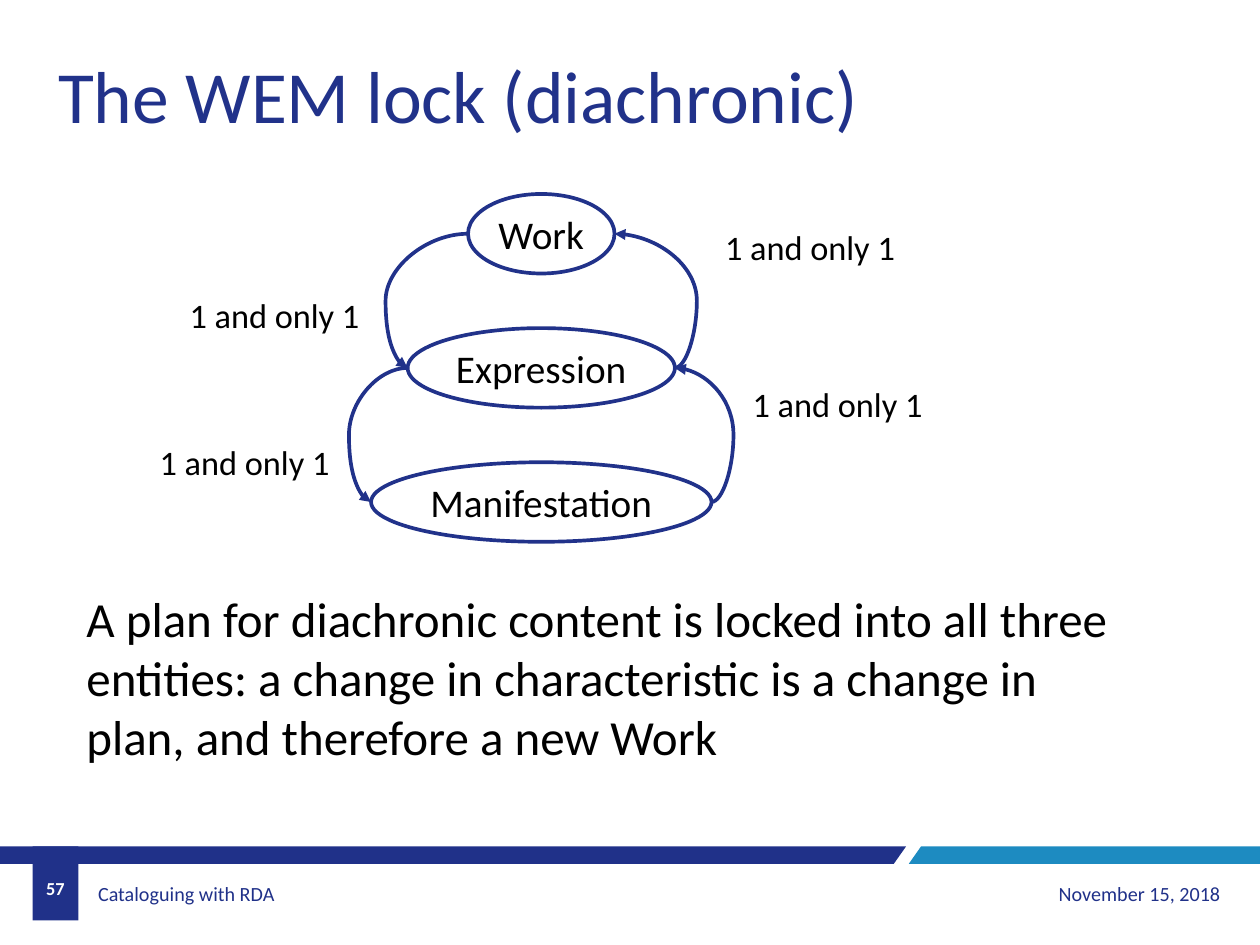
from dataclasses import dataclass
from lxml import etree
from pptx import Presentation
from pptx.dml.color import RGBColor
from pptx.enum.shapes import MSO_CONNECTOR, MSO_SHAPE
from pptx.enum.text import MSO_ANCHOR, PP_ALIGN
from pptx.oxml.ns import qn
from pptx.util import Inches, Pt

CURVE = MSO_CONNECTOR.CURVE
OVAL, RECT = MSO_SHAPE.OVAL, MSO_SHAPE.RECTANGLE
TOP, MIDDLE = MSO_ANCHOR.TOP, MSO_ANCHOR.MIDDLE
LEFT, CENTER, RIGHT = PP_ALIGN.LEFT, PP_ALIGN.CENTER, PP_ALIGN.RIGHT
OVAL_LEFT, OVAL_RIGHT = 2, 6
COLS, ROWS = 48, 36


@dataclass(frozen=True)
class Theme:
    font: str = "Calibri"
    band: str = "203189"
    accent: str = "1D8BC1"
    ink: str = "21328A"
    text: str = "000000"
    paper: str = "FFFFFF"
    title: float = 60
    body: float = 40
    entity: float = 32
    label: float = 28
    footer: float = 16.4
    number: float = 14.9
    stroke: float = 3


class Deck:
    def __init__(self, theme):
        self.theme = theme
        self.prs = Presentation()
        self.prs.slide_width, self.prs.slide_height = Inches(14.28), Inches(10.71)
        self.slide = self.prs.slides.add_slide(self.prs.slide_layouts[6])
        self.shapes = self.slide.shapes

    def x(self, cols):
        return round(self.prs.slide_width * cols / COLS)

    def y(self, rows):
        return round(self.prs.slide_height * rows / ROWS)

    def box(self, left, top, width, height):
        return self.x(left), self.y(top), self.x(width), self.y(height)

    def paint(self, sp, fill, line=None):
        sp.shadow.inherit = False
        sp.fill.solid()
        sp.fill.fore_color.rgb = RGBColor.from_string(fill)
        if line:
            sp.line.color.rgb = RGBColor.from_string(line)
            sp.line.width = Pt(self.theme.stroke)
        else:
            sp.line.fill.background()
        return sp

    def fill_text(self, sp, text, size, color, align=LEFT, bold=False, **frame):
        tf = sp.text_frame
        for name, value in {"word_wrap": False, "vertical_anchor": TOP, **frame}.items():
            setattr(tf, name, value)
        p = tf.paragraphs[0]
        p.alignment = align
        r = p.add_run()
        r.text = text
        style = {"name": self.theme.font, "size": Pt(size), "bold": bold}
        for name, value in style.items():
            setattr(r.font, name, value)
        r.font.color.rgb = RGBColor.from_string(color)

    def text(self, place, text, size, color, **style):
        self.fill_text(self.shapes.add_textbox(*self.box(*place)), text, size, color, **style)

    def rect(self, place, fill):
        self.paint(self.shapes.add_shape(RECT, *self.box(*place)), fill)

    def polygon(self, points, fill):
        first, *rest = [(self.x(col), self.y(row)) for col, row in points]
        builder = self.shapes.build_freeform(*first)
        builder.add_line_segments(rest, close=True)
        self.paint(builder.convert_to_shape(), fill)

    def oval(self, place, text):
        t = self.theme
        sp = self.paint(self.shapes.add_shape(OVAL, *self.box(*place)), t.paper, t.ink)
        self.fill_text(sp, text, t.entity, t.text, align=CENTER)
        return sp

    def arc(self, start, end, site, bulge):
        ends = []
        for sp in (start, end):
            side = sp.left if site == OVAL_LEFT else sp.left + sp.width
            ends += [side, sp.top + sp.height // 2]
        s = self.shapes.add_connector(CURVE, *ends)
        s.line.color.rgb = RGBColor.from_string(self.theme.ink)
        s.line.width = Pt(self.theme.stroke)
        props = s._element.spPr
        etree.SubElement(props.find(qn("a:ln")), qn("a:tailEnd"), type="triangle")
        etree.SubElement(props, qn("a:effectLst"))
        reach = self.x(bulge) / s.width
        bend = 1 + reach if site == OVAL_LEFT else -reach
        guides = props.find(qn("a:prstGeom")).get_or_add_avLst()
        etree.SubElement(guides, qn("a:gd"), name="adj1", fmla=f"val {round(bend * 100000)}")
        links = s._element.nvCxnSpPr.cNvCxnSpPr
        for tag, sp in (("a:stCxn", start), ("a:endCxn", end)):
            etree.SubElement(links, qn(tag), id=str(sp.shape_id), idx=str(site))


def draw_footer(deck):
    t = deck.theme
    top, bottom = 32.24, 32.91
    deck.polygon([(34.52, top), (0, top), (0, bottom), (34.05, bottom)], t.band)
    deck.polygon([(COLS, top), (35.09, top), (34.62, bottom), (COLS, bottom)], t.accent)
    deck.rect((1.24, top, 1.75, 2.82), t.band)
    deck.text((3.5, 33.11, 18.55, 1.85), "Cataloguing with RDA", t.footer, t.band,
              word_wrap=True, vertical_anchor=MIDDLE,
              margin_left=Inches(0.07), margin_right=Inches(0.07))
    deck.text((34.52, 33.11, 12.3, 1.85), "November 15, 2018", t.footer, t.band,
              align=RIGHT, word_wrap=True, vertical_anchor=MIDDLE)
    deck.text((1.24, bottom, 1.75, 1.85), "57", t.number, t.paper,
              align=CENTER, bold=True, word_wrap=True, vertical_anchor=MIDDLE)


def draw_lock(deck):
    t = deck.theme
    center, top, pitch, height, bulge = 20.62, 7.39, 5.11, 3.03, 0.84
    entities = [("Work", 5.58), ("Expression", 10.18), ("Manifestation", 12.97)]
    ovals = [deck.oval((center - width / 2, top + i * pitch, width, height), name)
             for i, (name, width) in enumerate(entities)]
    for upper, lower in zip(ovals, ovals[1:]):
        deck.arc(upper, lower, OVAL_LEFT, bulge)
        deck.arc(lower, upper, OVAL_RIGHT, bulge)
    for col, row in [(27.29, 8.47), (28.34, 14.42), (6.89, 11.06), (5.75, 16.64)]:
        deck.text((col, row, 7.23, 1.92), "1 and only 1", t.label, t.text)


def main():
    deck = Deck(Theme())
    t = deck.theme
    draw_footer(deck)
    deck.text((1.88, 1.75, 31.5, 3.73), "The WEM lock (diachronic)", t.title, t.ink)
    draw_lock(deck)
    deck.text((2.96, 22.25, 40.6, 7.13),
              "A plan for diachronic content is locked into all three entities: "
              "a change in characteristic is a change in plan, and therefore a new Work",
              t.body, t.text, word_wrap=True)
    deck.prs.save("out.pptx")


if __name__ == "__main__":
    main()
